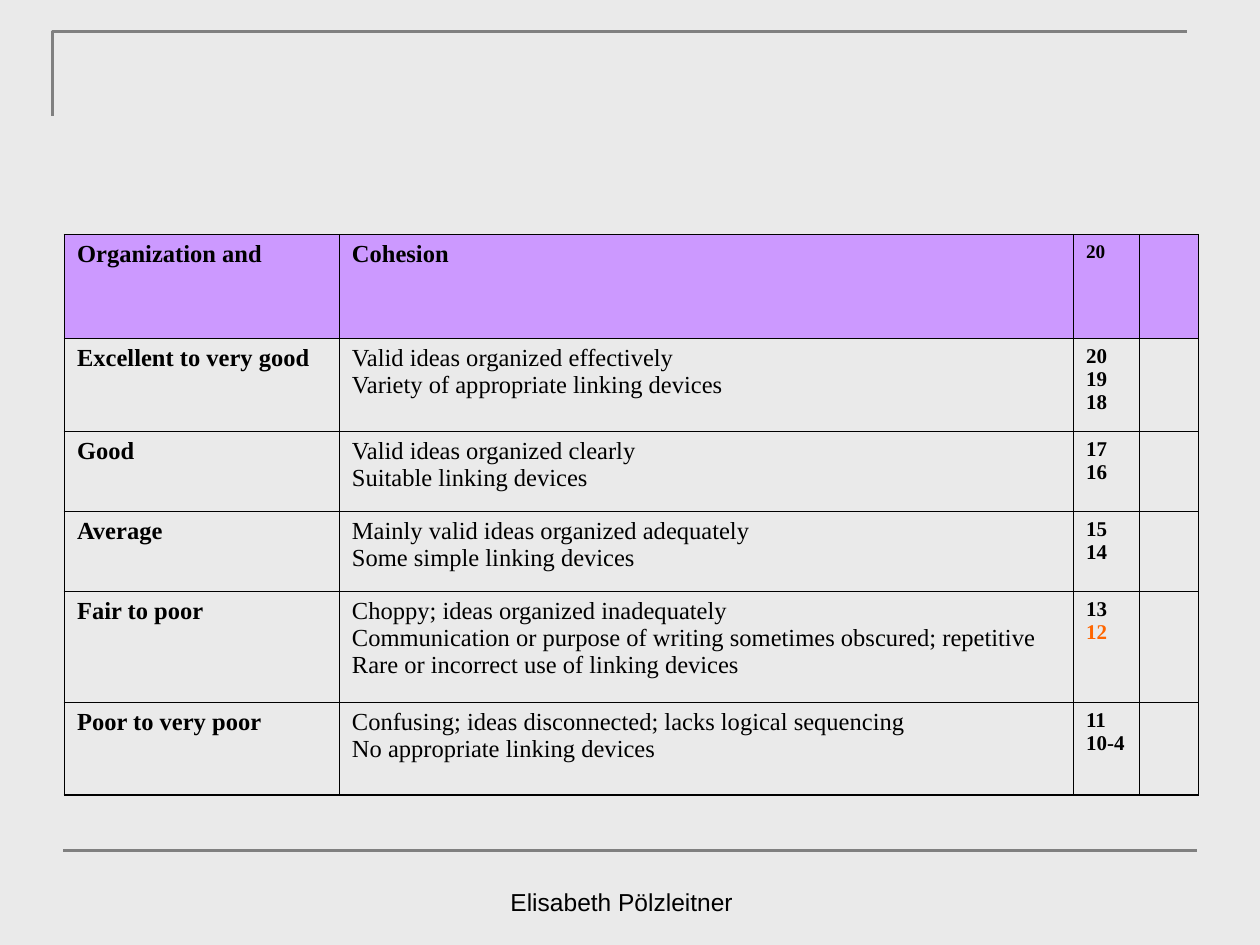
from lxml import etree
from pptx import Presentation
from pptx import util as u
from pptx.dml.color import RGBColor
from pptx.enum import shapes, text
from pptx.oxml import parse_xml
from pptx.oxml.ns import nsdecls, qn


def rgb(value):
    return RGBColor.from_string(value)


def format_paragraph(p, font, size, bold, color):
    for r in p.runs:
        r.font.name = font
        r.font.size = u.Pt(size)
        r.font.bold = bold
        r.font.color.rgb = rgb(color)


prs = Presentation()
prs.slide_width = u.Cm(25.4)
prs.slide_height = u.Cm(19.05)
s = prs.slides.add_slide(prs.slide_layouts[6])
s.background.fill.solid()
s.background.fill.fore_color.rgb = rgb("EAEAEA")

fb = s.shapes.build_freeform(u.Cm(1.06), u.Cm(2.33))
fb.add_line_segments([(u.Cm(1.06), u.Cm(0.63)), (u.Cm(23.92), u.Cm(0.63))], close=False)
corner = fb.convert_to_shape()
corner.fill.background()
corner.shadow.inherit = False

rule = s.shapes.add_connector(
    shapes.MSO_CONNECTOR.STRAIGHT, u.Cm(1.27), u.Cm(17.14), u.Cm(24.13), u.Cm(17.14))
etree.SubElement(rule._element.spPr, qn("a:effectLst"))
for sp in (corner, rule):
    sp.line.color.rgb = rgb("808080")
    sp.line.width = u.Pt(1.5)
rule._element.spPr.append(rule._element.spPr.find(qn("a:effectLst")))

footer = s.shapes.add_textbox(u.Cm(8.51), u.Cm(17.33), u.Cm(8.05), u.Cm(1.27))
tf = footer.text_frame
tf.word_wrap = True
tf.vertical_anchor = text.MSO_ANCHOR.BOTTOM
tf.text = "Elisabeth Pölzleitner"
tf.paragraphs[0].alignment = text.PP_ALIGN.CENTER
format_paragraph(tf.paragraphs[0], "Arial", 14, False, "000000")

rows = [
    ("Organization and", "Cohesion", "20", ""),
    ("Excellent to very good",
     "Valid ideas organized effectively\nVariety of appropriate linking devices",
     "20\n19\n18", ""),
    ("Good", "Valid ideas organized clearly\nSuitable linking devices", "17\n16", ""),
    ("Average",
     "Mainly valid ideas organized adequately\nSome simple linking devices",
     "15\n14", ""),
    ("Fair to poor",
     "Choppy; ideas organized inadequately\n"
     "Communication or purpose of writing sometimes obscured; repetitive\n"
     "Rare or incorrect use of linking devices",
     "13\n12", ""),
    ("Poor to very poor",
     "Confusing; ideas disconnected; lacks logical sequencing\n"
     "No appropriate linking devices",
     "11\n10-4", ""),
]
widths = [5.54, 14.8, 1.33, 1.19]
heights = [2.09, 1.88, 1.61, 1.61, 2.24, 1.87]

frame = s.shapes.add_table(
    len(rows), len(widths), u.Cm(1.3), u.Cm(4.73), u.Cm(sum(widths)), u.Cm(sum(heights)))
table = frame.table
table.first_row = False
table.horz_banding = False
for column, width in zip(table.columns, widths):
    column.width = u.Cm(width)
for row, height in zip(table.rows, heights):
    row.height = u.Cm(height)

for i, row in enumerate(rows):
    for j, wording in enumerate(row):
        cell = table.cell(i, j)
        tcPr = cell._tc.get_or_add_tcPr()
        for side in ("lnL", "lnR", "lnT", "lnB"):
            tcPr.append(parse_xml(
                f'<a:{side} {nsdecls("a")} w="12700"><a:solidFill>'
                f'<a:srgbClr val="000000"/></a:solidFill></a:{side}>'))
        if i == 0:
            cell.fill.solid()
            cell.fill.fore_color.rgb = rgb("CC99FF")
        else:
            cell.fill.background()
        if not wording:
            continue
        cell.text_frame.text = wording
        size = 14 if j < 2 else 11 if i == 0 else 12
        for p in cell.text_frame.paragraphs:
            left = j == 0 and i > 0
            p.alignment = text.PP_ALIGN.LEFT if left else text.PP_ALIGN.JUSTIFY
            pPr = p._p.get_or_add_pPr()
            pPr.set("marL", str(u.Cm(0.97)))
            pPr.set("indent", str(-u.Cm(0.97)))
            color = "FF6600" if p.text == "12" else "000000"
            format_paragraph(p, "Times New Roman", size, i == 0 or j != 1, color)

prs.save("out.pptx")
